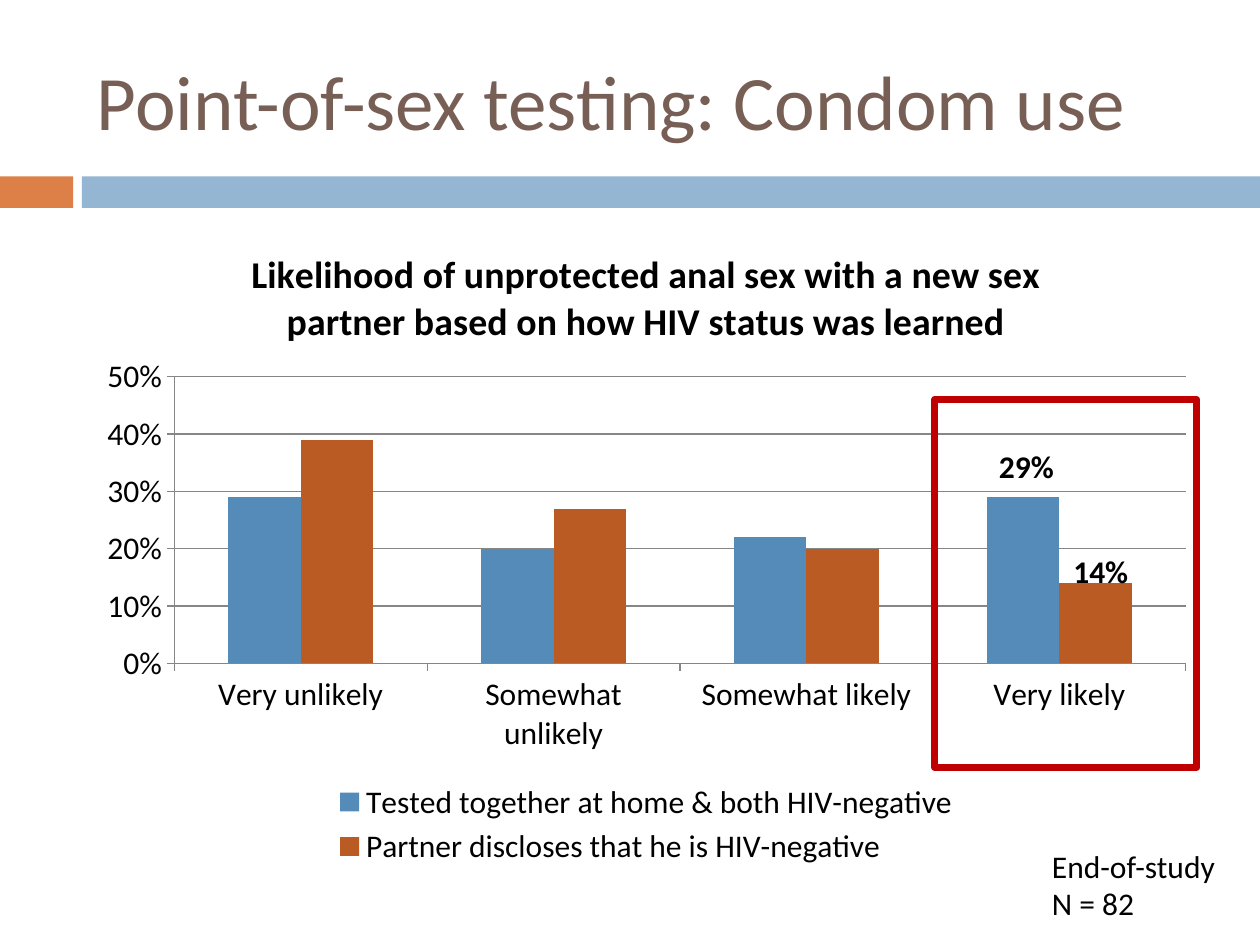
from lxml import etree
from pptx import Presentation
from pptx.chart.data import CategoryChartData
from pptx.dml.color import RGBColor
from pptx.enum import chart as ch, shapes, text
from pptx.oxml import ns
from pptx.util import Inches, Pt

FONT = "Calibri"
COLORS = {
    "orange": "DD8047",
    "blue": "94B6D2",
    "title": "775F55",
    "text": "000000",
    "grid": "868686",
    "together": "558BB8",
    "disclosed": "B95B22",
    "highlight": "C00000",
}


def color(name):
    return RGBColor.from_string(COLORS[name])


def style_font(font, size, name="text", bold=False):
    font.name = FONT
    font.size = Pt(size)
    font.bold = bold
    font.color.rgb = color(name)


def add_rectangle(slide, left, top, width, height):
    rectangle = slide.shapes.add_shape(
        shapes.MSO_SHAPE.RECTANGLE,
        Inches(left), Inches(top), Inches(width), Inches(height))
    rectangle.shadow.inherit = False
    return rectangle


def add_text(slide, left, top, width, height, lines, size=18, name="text",
             bold=False, anchor=text.MSO_ANCHOR.TOP):
    box = slide.shapes.add_textbox(
        Inches(left), Inches(top), Inches(width), Inches(height))
    frame = box.text_frame
    frame.text = lines
    frame.word_wrap = True
    frame.vertical_anchor = anchor
    for paragraph in frame.paragraphs:
        for run in paragraph.runs:
            style_font(run.font, size, name, bold)


def add_header(slide, left, top, width):
    stripe_top, gap, marker_width = top + 1.4, 0.07, 0.58
    stripe_left = left + marker_width + gap
    for x, w, name in ((left, marker_width, "orange"),
                       (stripe_left, left + width - stripe_left, "blue")):
        stripe = add_rectangle(slide, x, stripe_top, w, 0.25)
        stripe.fill.solid()
        stripe.fill.fore_color.rgb = color(name)
        stripe.line.fill.background()
    add_text(slide, left + 0.67, top + 0.25, 8.92, 1.08,
             "Point-of-sex testing: Condom use", 44, "title",
             anchor=text.MSO_ANCHOR.MIDDLE)


def set_plot_layout(chart, **fractions):
    plot_area = chart.element.find(".//" + ns.qn("c:plotArea"))
    for old in plot_area.findall(ns.qn("c:layout")):
        plot_area.remove(old)
    layout = etree.Element(ns.qn("c:layout"))
    manual = etree.SubElement(layout, ns.qn("c:manualLayout"))
    settings = {"layoutTarget": "inner", "xMode": "edge", "yMode": "edge"}
    for tag, value in {**settings, **fractions}.items():
        etree.SubElement(manual, ns.qn("c:" + tag)).set("val", str(value))
    plot_area.insert(0, layout)


def add_likelihood_chart(slide, left, top, width, height):
    data = CategoryChartData(number_format="0%")
    data.categories = ["Very unlikely", "Somewhat unlikely",
                       "Somewhat likely", "Very likely"]
    data.add_series("Tested together at home & both HIV-negative",
                    (0.29, 0.2, 0.22, 0.29))
    data.add_series("Partner discloses that he is HIV-negative",
                    (0.39, 0.27, 0.2, 0.14))
    chart = slide.shapes.add_chart(
        ch.XL_CHART_TYPE.COLUMN_CLUSTERED, Inches(left), Inches(top),
        Inches(width), Inches(height), data).chart
    style_font(chart.font, 18)

    chart.has_title = True
    heading = chart.chart_title.text_frame
    heading.text = ("Likelihood of unprotected anal sex with a new sex "
                    "partner based on how HIV status was learned")
    style_font(heading.paragraphs[0].runs[0].font, 21.6, bold=True)
    chart.chart_title.include_in_layout = False

    chart.has_legend = True
    chart.legend.position = ch.XL_LEGEND_POSITION.BOTTOM
    chart.legend.include_in_layout = False
    style_font(chart.legend.font, 18)

    plot = chart.plots[0]
    plot.gap_width = 150
    plot.overlap = 0
    plot.vary_by_categories = False
    for series, name in zip(plot.series, ("together", "disclosed")):
        series.format.fill.solid()
        series.format.fill.fore_color.rgb = color(name)

    values = chart.value_axis
    values.minimum_scale, values.maximum_scale = 0, 0.5
    values.major_unit = 0.1
    values.tick_labels.number_format = "0%"
    values.tick_labels.number_format_is_linked = False
    values.has_major_gridlines = True
    for axis in (chart.category_axis, values):
        axis.major_tick_mark = ch.XL_TICK_MARK.OUTSIDE
        style_font(axis.tick_labels.font, 18)
    for part in (chart.category_axis, values, values.major_gridlines):
        part.format.line.color.rgb = color("grid")
        part.format.line.width = Pt(0.75)
    set_plot_layout(chart, x=0.08, y=0.24, w=0.9, h=0.44)


def add_highlight(slide, left, top, width, height):
    frame = add_rectangle(slide, left, top, width, height)
    frame.fill.background()
    frame.line.color.rgb = color("highlight")
    frame.line.width = Pt(4)
    add_text(slide, left + 0.41, top + 0.33, 0.67, 0.4, "29%", bold=True)
    add_text(slide, left + 1, top + 1.16, 0.75, 0.4, "14%", bold=True)


def main():
    deck = Presentation()
    deck.slide_width, deck.slide_height = Inches(10), Inches(7.5)
    slide = deck.slides.add_slide(deck.slide_layouts[6])
    add_header(slide, 0, 0, 10)
    add_likelihood_chart(slide, 0.67, 1.75, 8.92, 5.17)
    add_highlight(slide, 7.42, 3.17, 2.08, 2.92)
    add_text(slide, 8.25, 6.67, 1.58, 0.71, "End-of-study\nN = 82")
    deck.save("out.pptx")


if __name__ == "__main__":
    main()
